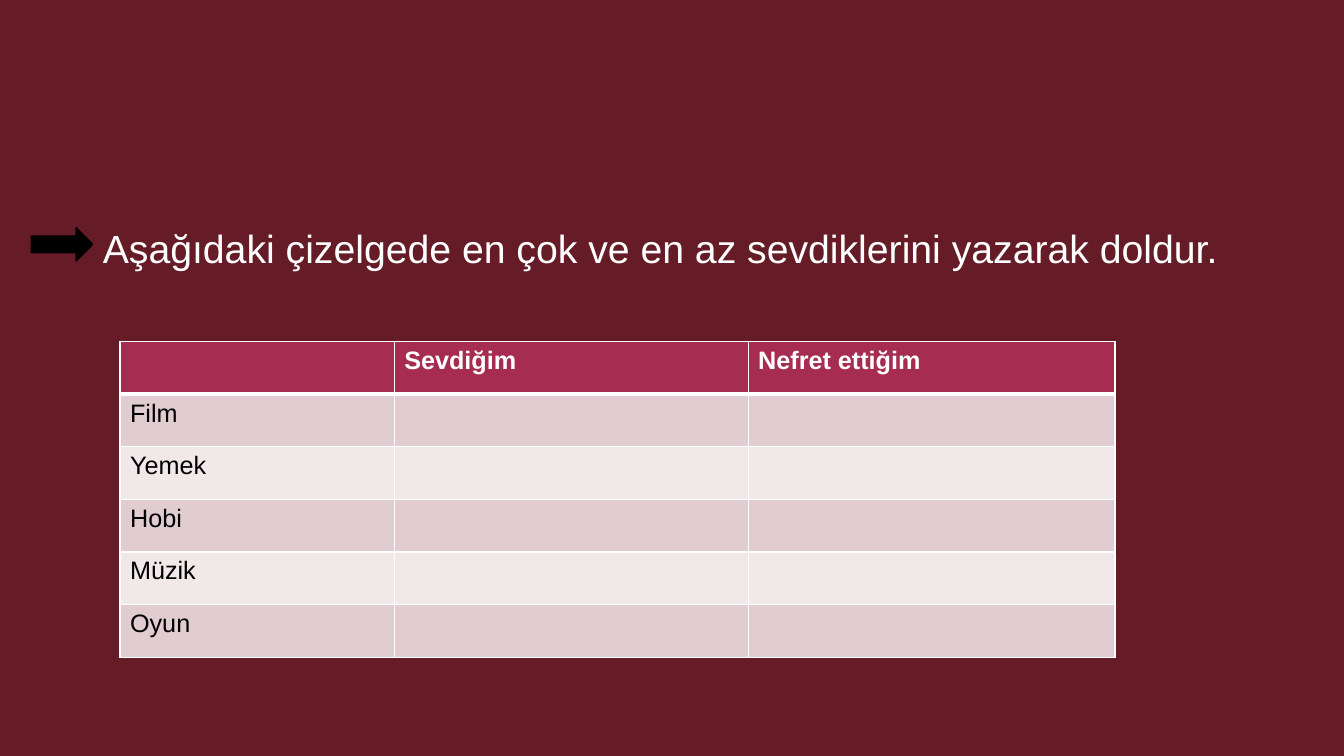
from lxml.etree import SubElement
from pptx import Presentation
from pptx.dml.color import RGBColor
from pptx.enum.shapes import MSO_SHAPE as Shape
from pptx.oxml import parse_xml
from pptx.oxml.ns import nsdecls, qn
from pptx.util import Inches, Pt

COLORS = {
    "background": "651C27",
    "header": "A62C52",
    "odd_row": "E1CDD1",
    "even_row": "F1E8E9",
    "light": "FFFFFF",
    "dark": "000000",
}
FONT = "Arial"
HEADINGS = ["", "Sevdiğim", "Nefret ettiğim"]
TOPICS = ["Film", "Yemek", "Hobi", "Müzik", "Oyun"]
COLUMN_WIDTHS = [2.72, 3.51, 3.64]


def color(name):
    return RGBColor.from_string(COLORS[name])


def paint(fill, name):
    fill.solid()
    fill.fore_color.rgb = color(name)


def style(paragraph, size, color_name, bold=False):
    font = paragraph.font
    font.name, font.size, font.bold = FONT, Pt(size), bold
    font.color.rgb = color(color_name)


def add_instruction(slide, left, top, width, height):
    body = slide.placeholders[1]
    body.left, body.top = Inches(left), Inches(top)
    body.width, body.height = Inches(width), Inches(height)
    paragraph = body.text_frame.paragraphs[0]
    paragraph.text = "Aşağıdaki çizelgede en çok ve en az sevdiklerini yazarak doldur."
    properties = paragraph._p.get_or_add_pPr()
    properties.set("marL", "0")
    properties.set("indent", "0")
    SubElement(properties, qn("a:buNone"))
    paragraph.line_spacing = 1.1
    paragraph.space_before = Pt(0)
    style(paragraph, 28, "light")


def add_arrow(slide, left, top, width, height):
    arrow = slide.shapes.add_shape(
        Shape.RIGHT_ARROW, Inches(left), Inches(top), Inches(width), Inches(height))
    arrow.shadow.inherit = False
    paint(arrow.fill, "dark")
    arrow.line.color.rgb = color("dark")
    arrow.line.width = Pt(1)


def set_borders(cell, top, bottom):
    """Draw the four cell edges, with top and bottom widths in points."""
    properties = cell._tc.get_or_add_tcPr()
    edges = {"lnL": 1, "lnR": 1, "lnT": top, "lnB": bottom}
    for position, (edge, width) in enumerate(edges.items()):
        properties.insert(position, parse_xml(
            f'<a:{edge} {nsdecls("a")} w="{Pt(width)}"><a:solidFill>'
            f'<a:srgbClr val="{COLORS["light"]}"/></a:solidFill></a:{edge}>'))


def add_preferences_table(slide, left, top, height):
    rows = [HEADINGS] + [[topic, "", ""] for topic in TOPICS]
    table = slide.shapes.add_table(
        len(rows), len(HEADINGS), Inches(left), Inches(top),
        Inches(sum(COLUMN_WIDTHS)), Inches(height)).table
    for column, width in zip(table.columns, COLUMN_WIDTHS):
        column.width = Inches(width)
    for row_index, texts in enumerate(rows):
        is_header = row_index == 0
        band = "header" if is_header else "odd_row" if row_index % 2 else "even_row"
        for column_index, text in enumerate(texts):
            cell = table.cell(row_index, column_index)
            cell.text = text
            style(cell.text_frame.paragraphs[0], 18,
                  "light" if is_header else "dark", is_header)
            paint(cell.fill, band)
            set_borders(cell, top=3 if row_index == 1 else 1,
                        bottom=3 if is_header else 1)


def main():
    presentation = Presentation()
    presentation.slide_width, presentation.slide_height = Inches(13.33), Inches(7.5)
    slide = presentation.slides.add_slide(presentation.slide_layouts[1])
    paint(slide.background.fill, "background")
    title = slide.shapes.title._element
    title.getparent().remove(title)
    add_instruction(slide, 0.92, 2.13, 11.5, 4.59)
    add_preferences_table(slide, 1.19, 3.39, 3.13)
    add_arrow(slide, 0.31, 2.26, 0.61, 0.33)
    presentation.save("out.pptx")


if __name__ == "__main__":
    main()
